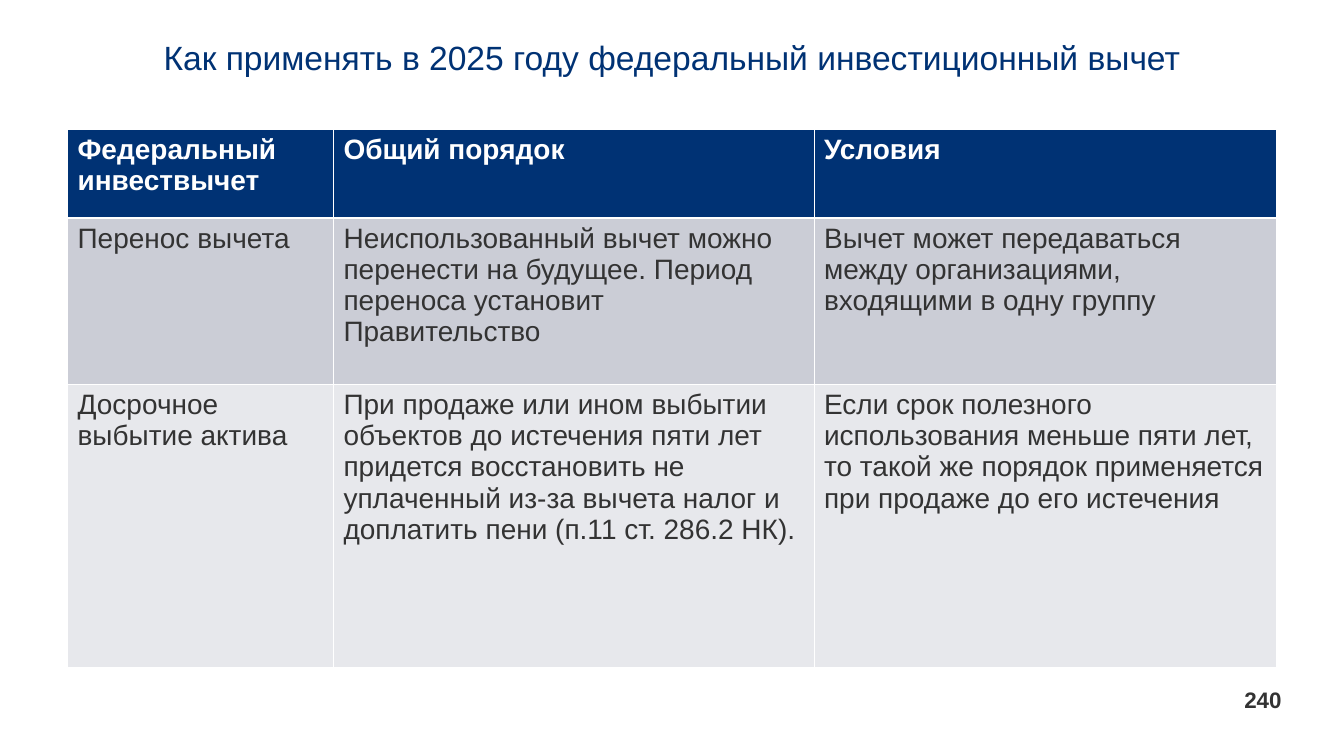
from dataclasses import dataclass

from lxml.etree import SubElement
from pptx import Presentation
from pptx.dml.color import RGBColor
from pptx.enum.text import MSO_ANCHOR, PP_ALIGN
from pptx.oxml.ns import qn
from pptx.slide import Slide
from pptx.table import _Cell
from pptx.text.text import TextFrame
from pptx.util import Emu, Pt

EMU_PER_PX = 9144
NAVY = "003274"
GRAPHITE = "333333"
WHITE = "FFFFFF"
THIN = 0.45
THICK = 1.47


@dataclass(frozen=True)
class Box:
    left: int
    top: int
    width: int
    height: int


@dataclass(frozen=True)
class Label:
    text: str
    box: Box
    size: int
    color: str
    align: PP_ALIGN
    anchor: MSO_ANCHOR
    inset_x: int
    inset_y: int
    bold: bool = False


@dataclass(frozen=True)
class Row:
    texts: tuple[str, ...]
    height: int
    fill: str
    color: str = GRAPHITE
    bold: bool = False
    top_line: float = THIN
    bottom_line: float = THIN


LABELS = (
    Label("240", Box(1222, 685, 50, 23), 16, GRAPHITE, PP_ALIGN.RIGHT, MSO_ANCHOR.BOTTOM, 0, 0, bold=True),
    Label("Как применять в 2025 году федеральный инвестиционный вычет", Box(67, 36, 1200, 125),
          24, NAVY, PP_ALIGN.CENTER, MSO_ANCHOR.TOP, 10, 5),
)
COLUMN_WIDTHS = (264, 477, 459)
ROWS = (
    Row(("Федеральный инвествычет", "Общий порядок", "Условия"), 88, NAVY, WHITE,
        bold=True, bottom_line=THICK),
    Row(("Перенос вычета",
         "Неиспользованный вычет можно перенести на будущее. Период переноса установит Правительство",
         "Вычет может передаваться между организациями, входящими в одну группу"),
        165, "CBCDD6", top_line=THICK),
    Row(("Досрочное выбытие актива",
         "При продаже или ином выбытии объектов до истечения пяти лет придется восстановить "
         "не уплаченный из-за вычета налог и доплатить пени (п.11 ст. 286.2 НК).",
         "Если срок полезного использования меньше пяти лет, то такой же порядок применяется "
         "при продаже до его истечения"), 281, "E7E8EC"),
)


def px(length: int) -> Emu:
    return Emu(length * EMU_PER_PX)


def rgb(color: str) -> RGBColor:
    return RGBColor.from_string(color)


def write(frame: TextFrame, text: str, *, size: int, color: str, bold: bool = False,
          align: PP_ALIGN = PP_ALIGN.LEFT, line_spacing: float = 1.0) -> None:
    frame.word_wrap = True
    paragraph = frame.paragraphs[0]
    paragraph.alignment = align
    paragraph.line_spacing = line_spacing
    run = paragraph.add_run()
    run.text = text
    run.font.name = "Arial"
    run.font.size = Pt(size)
    run.font.bold = bold
    run.font.color.rgb = rgb(color)


def draw_label(slide: Slide, label: Label) -> None:
    box = label.box
    frame = slide.shapes.add_textbox(px(box.left), px(box.top), px(box.width), px(box.height)).text_frame
    frame.margin_left = frame.margin_right = px(label.inset_x)
    frame.margin_top = frame.margin_bottom = px(label.inset_y)
    frame.vertical_anchor = label.anchor
    write(frame, label.text, size=label.size, color=label.color, bold=label.bold,
          align=label.align, line_spacing=0.9)


def draw_borders(cell: _Cell, row: Row) -> None:
    properties = cell._tc.get_or_add_tcPr()
    sides = {"L": THIN, "R": THIN, "T": row.top_line, "B": row.bottom_line}
    for side, width in sides.items():
        line = SubElement(properties, qn(f"a:ln{side}"), w=str(Pt(width)))
        SubElement(SubElement(line, qn("a:solidFill")), qn("a:srgbClr"), val=WHITE)


def draw_table(slide: Slide, left: int, top: int) -> None:
    width = sum(COLUMN_WIDTHS)
    height = sum(row.height for row in ROWS)
    table = slide.shapes.add_table(len(ROWS), len(COLUMN_WIDTHS), px(left), px(top),
                                   px(width), px(height)).table
    for column, column_width in zip(table.columns, COLUMN_WIDTHS):
        column.width = px(column_width)
    for table_row, row in zip(table.rows, ROWS):
        table_row.height = px(row.height)
        for cell, text in zip(table_row.cells, row.texts):
            cell.margin_left = cell.margin_right = px(10)
            cell.margin_top = cell.margin_bottom = px(5)
            draw_borders(cell, row)
            cell.fill.solid()
            cell.fill.fore_color.rgb = rgb(row.fill)
            write(cell.text_frame, text, size=20, color=row.color, bold=row.bold)


def main() -> None:
    presentation = Presentation()
    presentation.slide_width = px(1334)
    presentation.slide_height = px(750)
    slide = presentation.slides.add_slide(presentation.slide_layouts[6])
    for label in LABELS:
        draw_label(slide, label)
    draw_table(slide, 67, 128)
    presentation.save("out.pptx")


if __name__ == "__main__":
    main()
